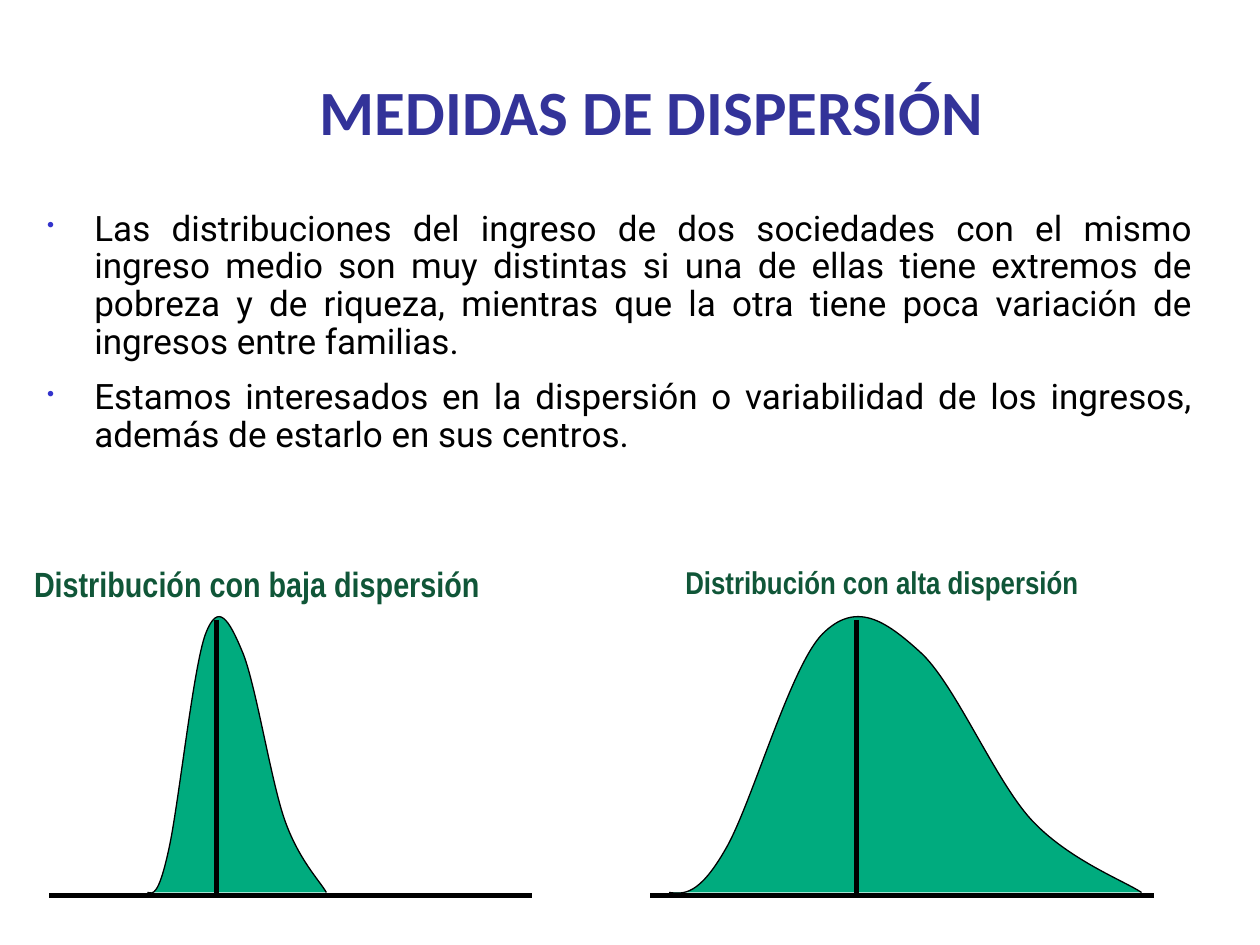
from dataclasses import dataclass

from lxml.etree import SubElement
from pptx import Presentation
from pptx.dml.color import RGBColor as Rgb
from pptx.enum.shapes import MSO_CONNECTOR as Connector
from pptx.enum.text import MSO_ANCHOR as Anchor, MSO_AUTO_SIZE as AutoSize, PP_ALIGN as Align
from pptx.oxml.ns import qn
from pptx.util import Inches, Pt

COLUMNS, ROWS = 100, 75
SLIDE_WIDTH, SLIDE_HEIGHT = Inches(10), Inches(7.5)


@dataclass(frozen=True)
class Theme:
    title: str = "333399"
    body: str = "000000"
    bullet: str = "3333CC"
    caption: str = "105638"
    curve: str = "00AB7E"
    axis: str = "000000"
    title_font: str = "Calibri"
    body_font: str = "Roboto"
    caption_font: str = "Arial Narrow"
    title_size: int = 36
    body_size: int = 20
    low_caption_size: int = 20
    high_caption_size: int = 18
    outline: float = 0.75
    axis_width: float = 3


THEME = Theme()

BULLETS = (
    "Las distribuciones del ingreso de dos sociedades con el mismo ingreso medio "
    "son muy distintas si una de ellas tiene extremos de pobreza y de riqueza, "
    "mientras que la otra tiene poca variación de ingresos entre familias.",
    "Estamos interesados en la dispersión o variabilidad de los ingresos, "
    "además de estarlo en sus centros. ",
)

BELL_START = (0, 99.3)
BELL_CURVES = (
    ((3.2, 100), (6.4, 100), (11.8, 85)),
    ((17.3, 70.4), (25.6, 22.3), (32.5, 11.2)),
    ((39.5, 0), (45.6, 6.4), (53, 17.2)),
    ((60.3, 27.5), (68.8, 60.5), (76.5, 74.2)),
    ((84.3, 88), (96.3, 95.3), (100, 99.3)),
)


def across(columns):
    return round(SLIDE_WIDTH * columns / COLUMNS)


def down(rows):
    return round(SLIDE_HEIGHT * rows / ROWS)


def place(box):
    left, top, width, height = box
    return across(left), down(top), across(width), down(height)


def add_run(paragraph, text, font, size, color, bold=False):
    run = paragraph.add_run()
    run.text = text
    run.font.name = font
    run.font.size = Pt(size)
    run.font.bold = bold
    run.font.color.rgb = Rgb.from_string(color)


def add_text_frame(slide, box, anchor, wrap=True, fit=AutoSize.SHAPE_TO_FIT_TEXT):
    frame = slide.shapes.add_textbox(*place(box)).text_frame
    frame.word_wrap = wrap
    frame.auto_size = fit
    frame.vertical_anchor = anchor
    return frame


def add_bullet(paragraph):
    properties = paragraph._p.get_or_add_pPr()
    properties.set("marL", str(across(3.75)))
    properties.set("indent", str(-across(3.75)))
    color = SubElement(properties, qn("a:buClr"))
    SubElement(color, qn("a:srgbClr"), val=THEME.bullet)
    SubElement(properties, qn("a:buSzPct"), val="60000")
    SubElement(properties, qn("a:buChar"), char="•")


def add_title(slide, box):
    frame = add_text_frame(slide, box, Anchor.BOTTOM)
    add_run(frame.paragraphs[0], "MEDIDAS DE DISPERSIÓN",
            THEME.title_font, THEME.title_size, THEME.title, bold=True)


def add_body(slide, box):
    frame = add_text_frame(slide, box, Anchor.TOP, fit=AutoSize.NONE)
    for index, sentence in enumerate(BULLETS):
        paragraph = frame.add_paragraph() if index else frame.paragraphs[0]
        paragraph.alignment = Align.JUSTIFY
        paragraph.line_spacing = 0.9
        paragraph.space_before = Pt(THEME.body_size / 2)
        add_bullet(paragraph)
        add_run(paragraph, sentence, THEME.body_font, THEME.body_size, THEME.body)


def add_caption(slide, box, caption, size):
    frame = add_text_frame(slide, box, Anchor.MIDDLE, wrap=False)
    frame.paragraphs[0].alignment = Align.CENTER
    add_run(frame.paragraphs[0], caption, THEME.caption_font, size,
            THEME.caption, bold=True)


def curve_segments(shape):
    outline = next(shape._element.iter(qn("a:path")))
    segments = outline.findall(qn("a:lnTo"))
    for first in range(0, len(segments), 3):
        curve = SubElement(outline, qn("a:cubicBezTo"))
        for segment in segments[first:first + 3]:
            curve.append(segment[0])
            outline.remove(segment)


def add_bell(slide, box):
    left, top, width, height = place(box)

    def locate(point):
        return left + width * point[0] / 100, top + height * point[1] / 100

    builder = slide.shapes.build_freeform(*locate(BELL_START))
    controls = [locate(point) for curve in BELL_CURVES for point in curve]
    builder.add_line_segments(controls, close=False)
    bell = builder.convert_to_shape()
    curve_segments(bell)
    bell.shadow.inherit = False
    bell.fill.solid()
    bell.fill.fore_color.rgb = Rgb.from_string(THEME.curve)
    bell.line.color.rgb = Rgb.from_string(THEME.axis)
    bell.line.width = Pt(THEME.outline)


def add_axis(slide, x1, y1, x2, y2):
    axis = slide.shapes.add_connector(
        Connector.STRAIGHT, across(x1), down(y1), across(x2), down(y2))
    axis.line.color.rgb = Rgb.from_string(THEME.axis)
    axis.line.width = Pt(THEME.axis_width)
    SubElement(axis._element.spPr, qn("a:effectLst"))


def add_distribution(slide, box, bell_left, bell_width, mean,
                     caption, caption_box, caption_size):
    left, top, width, height = box
    base = top + height
    add_bell(slide, (left + bell_left, top + 3.6, bell_width, 23.3))
    add_axis(slide, left + mean, top + 5.1, left + mean, base)
    add_axis(slide, left, base, left + width, base)
    caption_left, caption_top, caption_width, caption_height = caption_box
    add_caption(slide, (left + caption_left, top + caption_top,
                        caption_width, caption_height), caption, caption_size)


def main():
    deck = Presentation()
    deck.slide_width, deck.slide_height = SLIDE_WIDTH, SLIDE_HEIGHT
    slide = deck.slides.add_slide(deck.slide_layouts[6])
    add_body(slide, (2.75, 16.25, 92.9, 21.7))
    add_distribution(slide, (3.9, 44.1, 38.3, 27), 7.8, 14.2, 13.3,
                     "Distribución con baja dispersión",
                     (-2.3, 0, 37.6, 4.4), THEME.low_caption_size)
    add_distribution(slide, (51.6, 44.1, 40, 27), 1.5, 37.5, 16.4,
                     "Distribución con alta dispersión",
                     (1.6, 0.1, 33.6, 4), THEME.high_caption_size)
    add_title(slide, (24.4, 5.15, 57.5, 7.1))
    deck.save("out.pptx")


if __name__ == "__main__":
    main()
